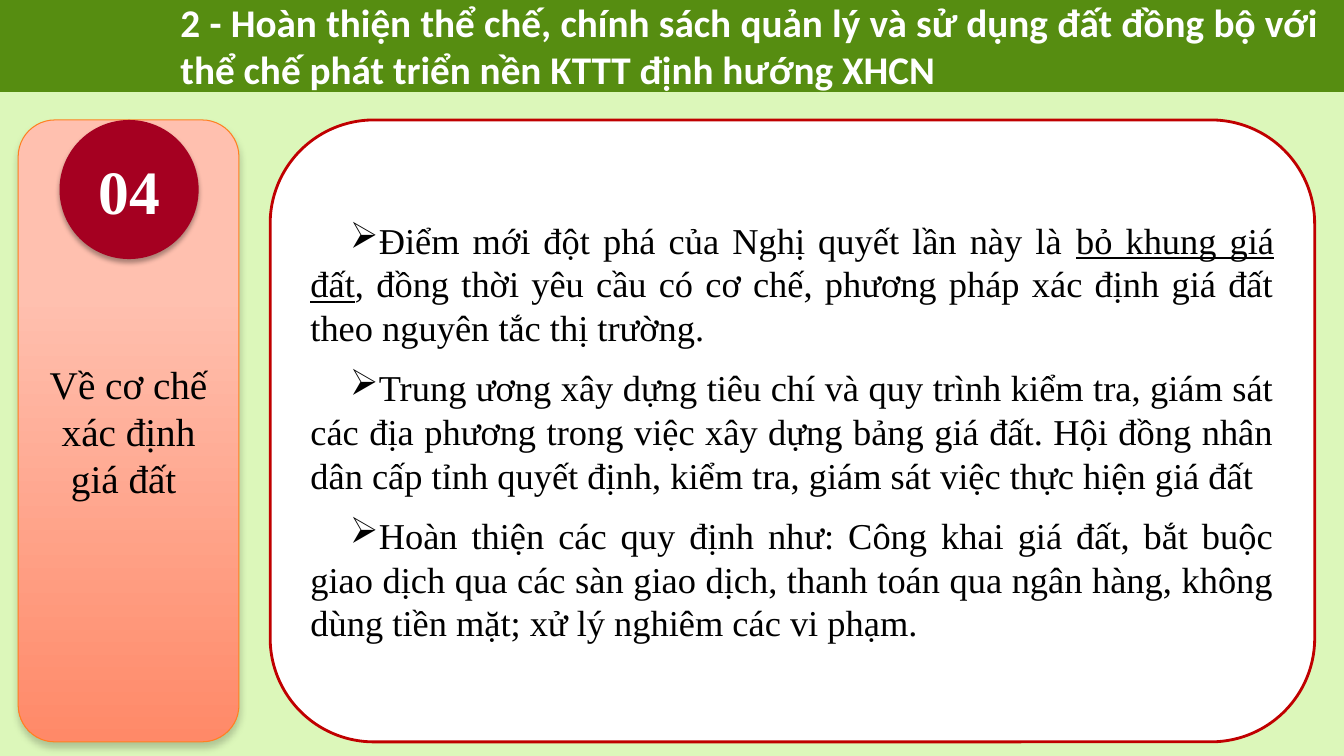
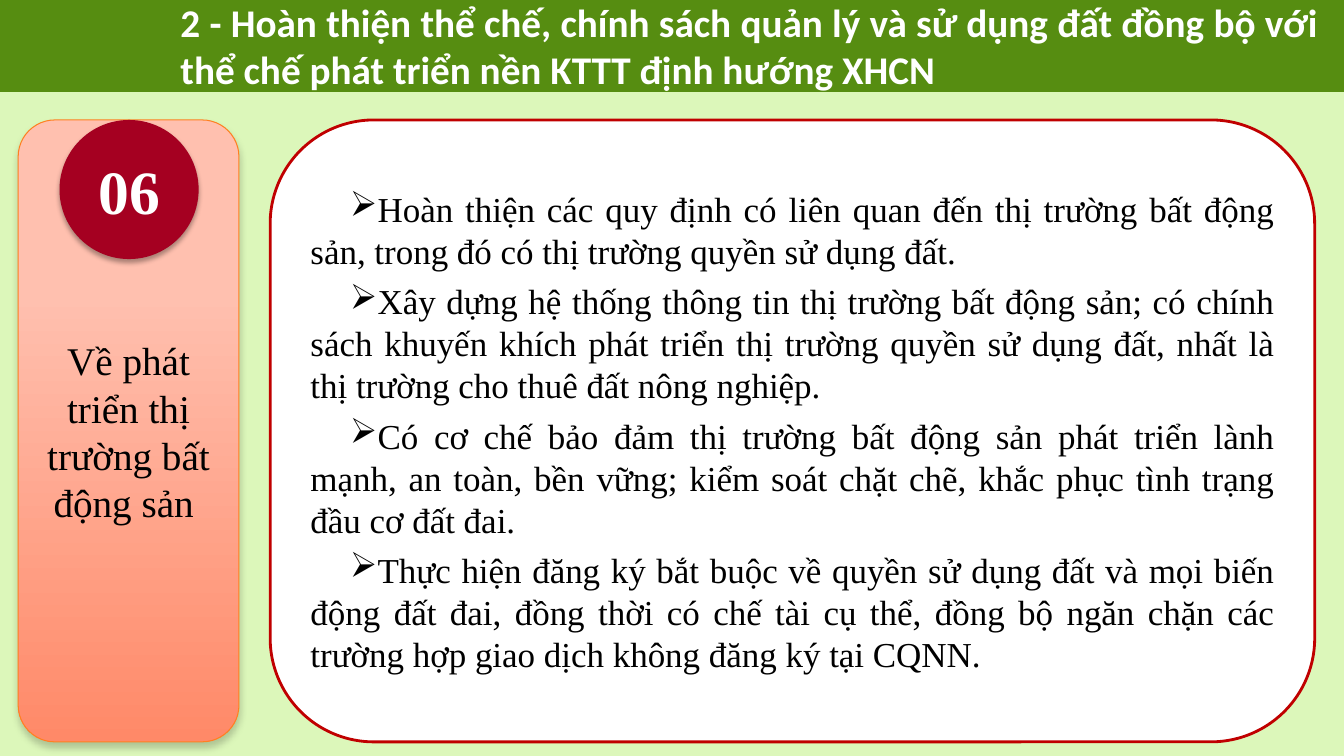
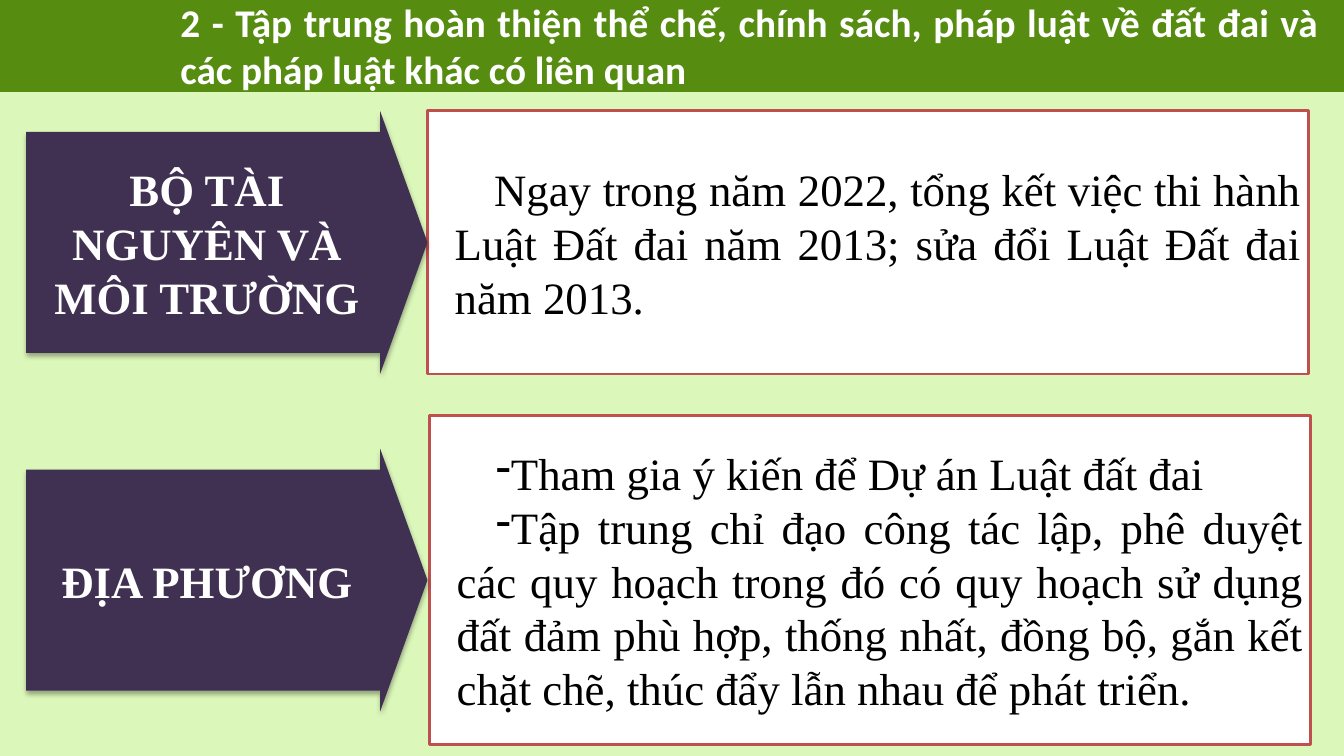
"""Build three slides on land policy reform."""
import pptx
import pptx.util
import pptx.dml.color
import pptx.enum.shapes
import pptx.enum.text
import pptx.oxml.ns
import lxml.etree

Inches = pptx.util.Inches
Pt = pptx.util.Pt
RGB = pptx.dml.color.RGBColor.from_string
qn = pptx.oxml.ns.qn
Kind = pptx.enum.shapes.MSO_SHAPE
Align = pptx.enum.text.PP_ALIGN
Anchor = pptx.enum.text.MSO_ANCHOR

HUES = {
    "green": "568D11", "pale": "DCF7BA", "white": "FFFFFF", "black": "000000",
    "peach": "FFC0AF", "coral": "FF8968", "orange": "FF8021", "wine": "A50021",
    "red": "C00000", "brick": "C0504D", "plum": "403152",
}
SERIF = "Times New Roman"
SLIM = (0.07, 0.04)
WIDE = (0.1, 0.05)
DEEP = (32, 3.5, 2.2)
SOFT = (20, 5, 4)


def draw(slide, kind, spot, fill, line=None, width=2, shade=None):
    shape = slide.shapes.add_shape(kind, *[Inches(v) for v in spot])
    shape.fill.solid()
    shape.fill.fore_color.rgb = RGB(HUES[fill])
    if line:
        shape.line.color.rgb = RGB(HUES[line])
        shape.line.width = Pt(width)
    else:
        shape.line.fill.background()
    shape.shadow.inherit = False
    if shade:
        alpha, blur, dist = shade
        effect = shape.element.spPr.find(qn("a:effectLst"))
        outer = lxml.etree.SubElement(
            effect, qn("a:outerShdw"), blurRad=str(Pt(blur)), dist=str(Pt(dist)),
            dir="5400000", algn="ctr", rotWithShape="0")
        tint = lxml.etree.SubElement(outer, qn("a:srgbClr"), val=HUES["black"])
        lxml.etree.SubElement(tint, qn("a:alpha"), val=str(alpha * 1000))
    return shape


def write(shape, items, size, hue="black", bold=False, align=Align.CENTER,
          face=SERIF, inset=WIDE, gap=0):
    frame = shape.text_frame
    frame.word_wrap = True
    frame.margin_left = frame.margin_right = Inches(inset[0])
    frame.margin_top = frame.margin_bottom = Inches(inset[1])
    for num, (text, left, first, mark) in enumerate(items):
        para = frame.add_paragraph() if num else frame.paragraphs[0]
        props = para._p.get_or_add_pPr()
        props.set("marL", str(Inches(left)))
        props.set("indent", str(Inches(first)))
        if mark:
            lxml.etree.SubElement(props, qn("a:buChar"), char=mark)
        para.alignment = align
        para.space_before = para.space_after = Pt(gap)
        font = para.font
        font.name, font.size, font.bold = face, Pt(size), bold
        font.color.rgb = RGB(HUES[hue])
        for part, piece in enumerate(text.split("_")):
            run = para.add_run()
            run.text = piece
            if part % 2:
                run.font.underline = True


POLICY = ("2 - Hoàn thiện thể chế, chính sách quản lý và sử dụng đất đồng bộ với "
          "thể chế phát triển nền KTTT định hướng XHCN")
TITLES = [
    POLICY,
    POLICY,
    "2 - Tập trung hoàn thiện thể chế, chính sách, pháp luật về đất đai và "
    "các pháp luật khác có liên quan",
]
TOPICS = [
    ("04", "Về cơ chế xác định giá đất ", 26, 6, [
        "Điểm mới đột phá của Nghị quyết lần này là _bỏ khung giá đất_, đồng thời "
        "yêu cầu có cơ chế, phương pháp xác định giá đất theo nguyên tắc thị trường.",
        "Trung ương xây dựng tiêu chí và quy trình kiểm tra, giám sát các địa phương "
        "trong việc xây dựng bảng giá đất. Hội đồng nhân dân cấp tỉnh quyết định, "
        "kiểm tra, giám sát việc thực hiện giá đất",
        "Hoàn thiện các quy định như: Công khai giá đất, bắt buộc giao dịch qua các "
        "sàn giao dịch, thanh toán qua ngân hàng, không dùng tiền mặt; xử lý nghiêm "
        "các vi phạm.",
    ]),
    ("06", "Về phát triển thị trường bất động sản ", 25, 3, [
        "Hoàn thiện các quy định có liên quan đến thị trường bất động sản, trong đó "
        "có thị trường quyền sử dụng đất.",
        "Xây dựng hệ thống thông tin thị trường bất động sản; có chính sách khuyến "
        "khích phát triển thị trường quyền sử dụng đất, nhất là thị trường cho thuê "
        "đất nông nghiệp.",
        "Có cơ chế bảo đảm thị trường bất động sản phát triển lành mạnh, an toàn, bền "
        "vững; kiểm soát chặt chẽ, khắc phục tình trạng đầu cơ đất đai.",
        "Thực hiện đăng ký bắt buộc về quyền sử dụng đất và mọi biến động đất đai, "
        "đồng thời có chế tài cụ thể, đồng bộ ngăn chặn các trường hợp giao dịch "
        "không đăng ký tại CQNN.",
    ]),
]
DUTIES = [
    ("BỘ TÀI NGUYÊN VÀ MÔI TRƯỜNG", 1.1, (4.24, 1.1, 8.74, 2.61), [
        ("Ngay trong năm 2022, tổng kết việc thi hành Luật Đất đai năm 2013; sửa đổi "
         "Luật Đất đai năm 2013.", 0.2, 0.39, None),
    ]),
    ("ĐỊA PHƯƠNG", 4.45, (4.26, 4.12, 8.74, 3.27), [
        ("Tham gia ý kiến để Dự án Luật đất đai", 0, 0.59, "-"),
        ("Tập trung chỉ đạo công tác lập, phê duyệt các quy hoạch trong đó có quy "
         "hoạch sử dụng đất đảm phù hợp, thống nhất, đồng bộ, gắn kết chặt chẽ, thúc "
         "đẩy lẫn nhau để phát triển.", 0.2, 0.39, "-"),
    ]),
]

deck = pptx.Presentation()
deck.slide_width, deck.slide_height = Inches(13.33), Inches(7.5)
layout = deck.slide_layouts[5]
back = deck.slide_master.background.fill
back.solid()
back.fore_color.rgb = RGB(HUES["green"])

slides = [deck.slides.add_slide(layout) for title in TITLES]
body = draw(slides[0], Kind.RECTANGLE, (0, 0.92, 13.33, 6.58), "pale", "pale", 1.25)
layout.shapes.element.insert(2, body.element)

for slide, title in zip(slides, TITLES):
    head = slide.shapes.title
    head.left, head.top = Inches(1.64), Inches(-0.07)
    head.width, head.height = Inches(11.53), Inches(1.04)
    head.text_frame.auto_size = pptx.enum.text.MSO_AUTO_SIZE.NONE
    head.text_frame.vertical_anchor = Anchor.TOP
    write(head, [(title, 0.05, 0, None)], 28, "white", True, Align.JUSTIFY, "Calibri")

for slide, (code, topic, size, gap, points) in zip(slides, TOPICS):
    card = draw(slide, Kind.ROUNDED_RECTANGLE, (0.18, 1.19, 2.19, 6.17),
                "peach", "orange", 0.75, SOFT)
    card.fill.gradient()
    card.fill.gradient_angle = 270
    for stop, hue, place in zip(card.fill.gradient_stops, ("peach", "coral"), (0.28, 1)):
        stop.color.rgb = RGB(HUES[hue])
        stop.position = place
    write(card, [(topic, 0, 0, None)], 28, inset=SLIM)

    badge = draw(slide, Kind.OVAL, (0.59, 1.19, 1.38, 1.38), "wine", shade=DEEP)
    write(badge, [(code, 0, 0, None)], 44, "white", True)
    badge.text_frame.word_wrap = False

    panel = draw(slide, Kind.ROUNDED_RECTANGLE, (2.68, 1.19, 10.36, 6.17), "white", "red")
    write(panel, [(point, 0, 0.39, "➢") for point in points], size,
          align=Align.JUSTIFY, gap=gap)

for owner, top, spot, tasks in DUTIES:
    box = draw(slides[2], Kind.RECTANGLE, spot, "white", "brick")
    write(box, tasks, 32, align=Align.JUSTIFY, inset=SLIM)
    arrow = draw(slides[2], Kind.RIGHT_ARROW, (0.26, top, 3.98, 2.61), "plum", shade=DEEP)
    arrow.adjustments[0], arrow.adjustments[1] = 0.84, 0.18
    write(arrow, [(owner, 0, 0, None)], 32, "white", True)

deck.save("out.pptx")
